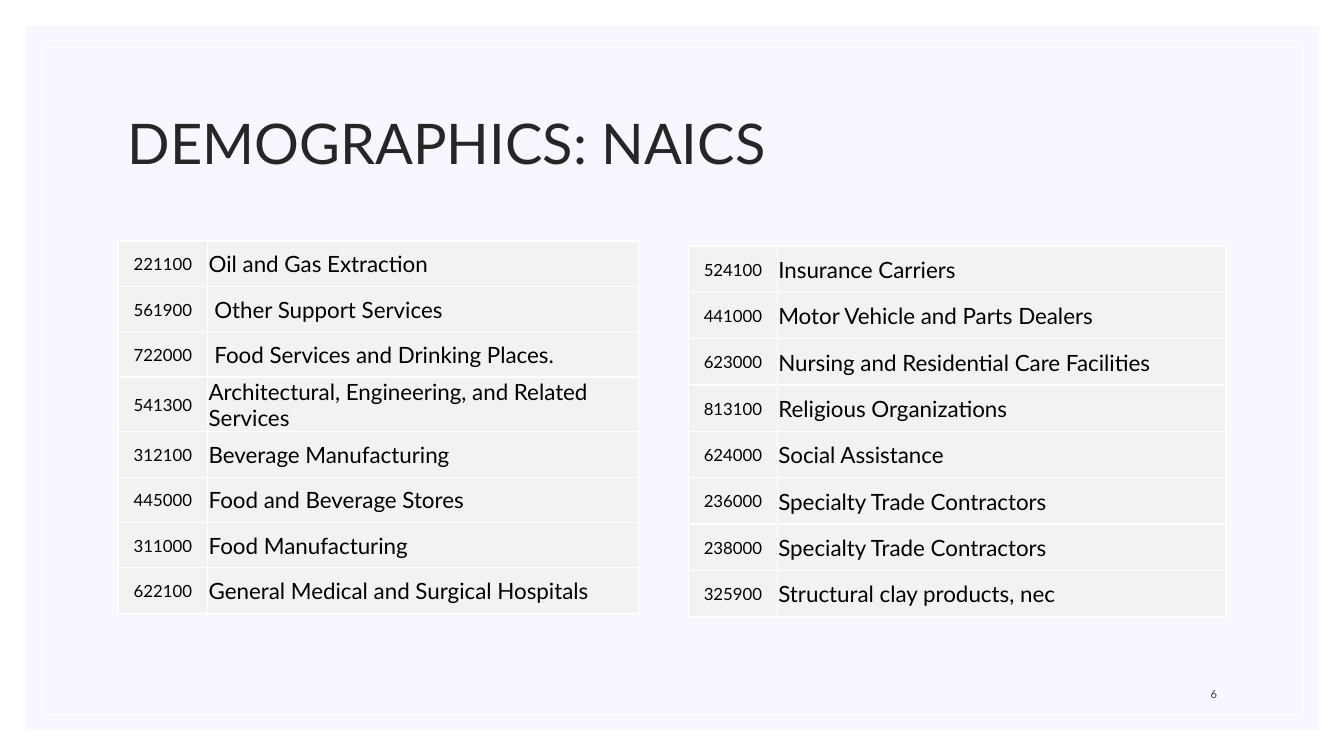
from dataclasses import dataclass

from lxml import etree
from pptx import Presentation
from pptx.dml.color import RGBColor
from pptx.enum.shapes import MSO_SHAPE
from pptx.enum.text import MSO_ANCHOR, PP_ALIGN
from pptx.oxml.ns import qn
from pptx.shapes.autoshape import Shape
from pptx.slide import Slide
from pptx.table import _Cell
from pptx.text.text import TextFrame
from pptx.util import Inches, Pt

RECTANGLE = MSO_SHAPE.RECTANGLE
MIDDLE, BOTTOM = MSO_ANCHOR.MIDDLE, MSO_ANCHOR.BOTTOM
LEFT, CENTER, RIGHT = PP_ALIGN.LEFT, PP_ALIGN.CENTER, PP_ALIGN.RIGHT


@dataclass(frozen=True)
class Theme:
    font: str = "Lato"
    panel: str = "F4F3FF"
    panel_opacity: int = 60
    line: str = "FFFFFF"
    cell: str = "F2F2F2"
    title: str = "262626"
    body: str = "000000"
    number: str = "404040"
    title_size: int = 40
    name_size: int = 16
    code_size: int = 12
    number_size: int = 8
    frame_width: float = 0.5
    border_width: float = 1


@dataclass(frozen=True)
class Box:
    left: float
    top: float
    width: float
    height: float

    def lengths(self) -> tuple[int, ...]:
        return tuple(Inches(value) for value in (self.left, self.top, self.width, self.height))


@dataclass(frozen=True)
class IndustryTable:
    left: float
    top: float
    code_width: float
    name_width: float
    row_height: float
    industries: tuple[tuple[str, str], ...]


THEME = Theme()

INDUSTRY_TABLES = (
    IndustryTable(1.17, 2.39, 0.89, 4.27, 0.45, (
        ("221100", "Oil and Gas Extraction"),
        ("561900", " Other Support Services"),
        ("722000", " Food Services and Drinking Places."),
        ("541300", "Architectural, Engineering, and Related Services"),
        ("312100", "Beverage Manufacturing"),
        ("445000", "Food and Beverage Stores"),
        ("311000", "Food Manufacturing"),
        ("622100", "General Medical and Surgical Hospitals"),
    )),
    IndustryTable(6.83, 2.44, 0.88, 4.45, 0.46, (
        ("524100", "Insurance Carriers"),
        ("441000", "Motor Vehicle and Parts Dealers"),
        ("623000", "Nursing and Residential Care Facilities"),
        ("813100", "Religious Organizations"),
        ("624000", "Social Assistance"),
        ("236000", "Specialty Trade Contractors"),
        ("238000", "Specialty Trade Contractors"),
        ("325900", "Structural clay products, nec"),
    )),
)


def color(value: str) -> RGBColor:
    return RGBColor.from_string(value)


def write(frame: TextFrame, text: str, size: int, ink: str, alignment: PP_ALIGN) -> None:
    paragraph = frame.paragraphs[0]
    paragraph.alignment = alignment
    run = paragraph.add_run()
    run.text = text
    run.font.name = THEME.font
    run.font.size = Pt(size)
    run.font.color.rgb = color(ink)


def add_rectangle(slide: Slide, box: Box) -> Shape:
    shape = slide.shapes.add_shape(RECTANGLE, *box.lengths())
    shape.shadow.inherit = False
    return shape


def add_background(slide: Slide) -> None:
    panel = add_rectangle(slide, Box(0.26, 0.26, 12.82, 6.98))
    panel.fill.solid()
    panel.fill.fore_color.rgb = color(THEME.panel)
    panel.line.fill.background()
    fill_color = panel.fill._xPr.find(f"{qn('a:solidFill')}/{qn('a:srgbClr')}")
    etree.SubElement(fill_color, qn("a:alpha"), val=str(THEME.panel_opacity * 1000))

    frame = add_rectangle(slide, Box(0.41, 0.41, 12.52, 6.68))
    frame.fill.background()
    frame.line.color.rgb = color(THEME.line)
    frame.line.width = Pt(THEME.frame_width)


def add_text(slide: Slide, box: Box, text: str, size: int, ink: str,
             alignment: PP_ALIGN, anchor: MSO_ANCHOR) -> TextFrame:
    frame = slide.shapes.add_textbox(*box.lengths()).text_frame
    frame.word_wrap = True
    frame.vertical_anchor = anchor
    write(frame, text, size, ink, alignment)
    return frame


def add_borders(cell: _Cell) -> None:
    properties = cell._tc.get_or_add_tcPr()
    for side in ("lnL", "lnR", "lnT", "lnB"):
        border = etree.SubElement(properties, qn(f"a:{side}"), w=str(Pt(THEME.border_width)))
        fill = etree.SubElement(border, qn("a:solidFill"))
        etree.SubElement(fill, qn("a:srgbClr"), val=THEME.line)


def fill_cell(cell: _Cell, text: str, size: int, alignment: PP_ALIGN) -> None:
    cell.margin_left = cell.margin_right = cell.margin_top = Inches(0.01)
    cell.margin_bottom = 0
    cell.vertical_anchor = MIDDLE
    add_borders(cell)
    cell.fill.solid()
    cell.fill.fore_color.rgb = color(THEME.cell)
    write(cell.text_frame, text, size, THEME.body, alignment)


def add_industry_table(slide: Slide, data: IndustryTable) -> None:
    row_count = len(data.industries)
    box = Box(data.left, data.top, data.code_width + data.name_width,
              data.row_height * row_count)
    table = slide.shapes.add_table(row_count, 2, *box.lengths()).table
    table.first_row = table.horz_banding = False
    table.columns[0].width = Inches(data.code_width)
    table.columns[1].width = Inches(data.name_width)
    for index, (code, name) in enumerate(data.industries):
        table.rows[index].height = Inches(data.row_height)
        fill_cell(table.cell(index, 0), code, THEME.code_size, CENTER)
        fill_cell(table.cell(index, 1), name, THEME.name_size, LEFT)


def main() -> None:
    presentation = Presentation()
    presentation.slide_width = Inches(13.33)
    presentation.slide_height = Inches(7.5)
    slide = presentation.slides.add_slide(presentation.slide_layouts[6])

    add_background(slide)
    title = add_text(slide, Box(1.17, 0.7, 11, 1.5), "DEMOGRAPHICS: NAICS",
                     THEME.title_size, THEME.title, LEFT, MIDDLE)
    title.paragraphs[0].line_spacing = 0.9
    for data in INDUSTRY_TABLES:
        add_industry_table(slide, data)
    add_text(slide, Box(11.25, 6.6, 0.92, 0.4), "6",
             THEME.number_size, THEME.number, RIGHT, BOTTOM)

    presentation.save("out.pptx")


if __name__ == "__main__":
    main()
